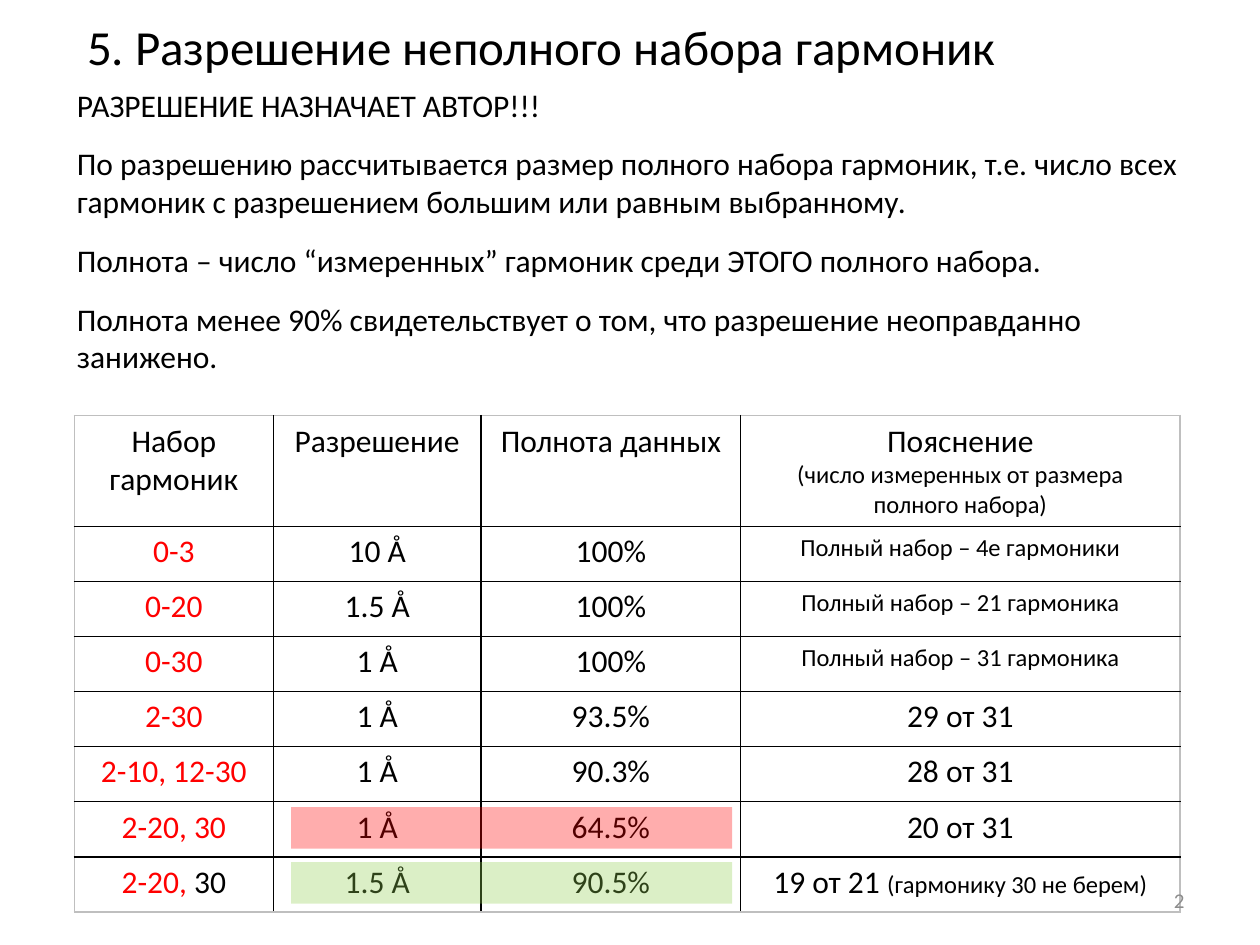
from pptx import Presentation
from pptx import util as u
from pptx.dml.color import RGBColor
from pptx.enum import shapes, text
from pptx.oxml import parse_xml
from pptx.oxml.ns import nsdecls, qn
from lxml import etree

# Content: a cell is a list of paragraphs, a paragraph a list of (text, size, colour)
FONT = "Calibri"
BLACK, RED, GREEN, GREY, EDGE = "000000", "FF0000", "92D050", "8C8C8C", "BFBFBF"
TITLE = "5. Разрешение неполного набора гармоник"
NOTES = [
    "РАЗРЕШЕНИЕ НАЗНАЧАЕТ АВТОР!!!",
    "По разрешению рассчитывается размер полного набора гармоник, т.е. число всех "
    "гармоник с разрешением большим или равным выбранному.",
    "Полнота – число “измеренных” гармоник среди ЭТОГО полного набора.",
    "Полнота менее 90% свидетельствует о том, что разрешение неоправданно занижено.",
]


def cell(words, size=18, color=BLACK):
    return [[(words, size, color)]]


HEAD = [
    cell("Набор гармоник"), cell("Разрешение"), cell("Полнота данных"),
    cell("Пояснение") + cell("(число измеренных от размера полного набора)", 14),
]
DATA = [
    ("0-3", "10 Å", "100%", cell("Полный набор – 4е гармоники", 14)),
    ("0-20", "1.5 Å", "100%", cell("Полный набор – 21 гармоника", 14)),
    ("0-30", "1 Å", "100%", cell("Полный набор – 31 гармоника", 14)),
    ("2-30", "1 Å", "93.5%", cell("29 от 31")),
    ("2-10, 12-30", "1 Å", "90.3%", cell("28 от 31")),
    ("2-20, 30", "1 Å", "64.5%", cell("20 от 31")),
    ([[("2-20, ", 18, RED), ("30", 18, BLACK)]], "1.5 Å", "90.5%",
     [[("19 от 21 ", 18, BLACK), ("(гармонику 30 не берем)", 14, BLACK)]]),
]
MARKS = {6: RED, 7: GREEN}  # table row: band colour

# Grid, in cm
LEFT, TOP = 1.5, 8.38
COLS = [4.01, 4.19, 5.23, 8.86]
HEAD_H, ROW_H = 2.23, 1.11


def rgb(code):
    return RGBColor.from_string(code)


def write(frame, paras, align, after=0):
    frame.word_wrap = True
    for i, runs in enumerate(paras):
        para = frame.paragraphs[0] if i == 0 else frame.add_paragraph()
        para.alignment = align
        para.space_after = u.Pt(after)
        for words, size, color in runs:
            run = para.add_run()
            run.text = words
            run.font.name, run.font.size = FONT, u.Pt(size)
            run.font.color.rgb = rgb(color)


def border(box, colors):
    props = box._tc.get_or_add_tcPr()
    for i, (side, color) in enumerate(colors.items()):
        props.insert(i, parse_xml(
            f'<a:{side} {nsdecls("a")} w="12700"><a:solidFill>'
            f'<a:srgbClr val="{color}"/></a:solidFill></a:{side}>'))


def place(cm):
    return [u.Cm(n) for n in cm]


prs = Presentation()
prs.slide_width, prs.slide_height = u.Cm(25.4), u.Cm(19.05)
slide = prs.slides.add_slide(prs.slide_layouts[5])

# Title
title = slide.shapes.title
title.left, title.top, title.width, title.height = place((1.5, 0.3, 18.87, 1.27))
title.text_frame.auto_size = text.MSO_AUTO_SIZE.NONE
title.text_frame.vertical_anchor = text.MSO_ANCHOR.MIDDLE
write(title.text_frame, cell(TITLE, 28), text.PP_ALIGN.LEFT)

# Table
rows = [HEAD] + [
    [cell(name, color=RED) if isinstance(name, str) else name, cell(res), cell(full), note]
    for name, res, full, note in DATA]
heights = [HEAD_H] + [ROW_H] * len(DATA)
table = slide.shapes.add_table(
    len(rows), len(COLS), *place((LEFT, TOP, sum(COLS), sum(heights)))).table
table.first_row = table.horz_banding = False
for col, width in zip(table.columns, COLS):
    col.width = u.Cm(width)
for r, row in enumerate(rows):
    table.rows[r].height = u.Cm(heights[r])
    for c, paras in enumerate(row):
        box = table.cell(r, c)
        box.fill.background()
        write(box.text_frame, paras, text.PP_ALIGN.CENTER)
        outer = {"lnL": c == 0, "lnR": c == len(COLS) - 1,
                 "lnT": r == 0, "lnB": r == len(rows) - 1}
        border(box, {side: EDGE if out else BLACK for side, out in outer.items()})

# Explanation above the table
notes = slide.shapes.add_textbox(*place((1.3, 1.6, 23.39, 6.15)))
write(notes.text_frame, [[(line, 18, BLACK)] for line in NOTES], text.PP_ALIGN.LEFT, 12)

# See-through bands over the last two rows
for r, color in MARKS.items():
    y = TOP + sum(heights[:r]) + 0.11
    band = slide.shapes.add_shape(
        shapes.MSO_SHAPE.RECTANGLE, *place((5.87, y, 8.89, 0.84)))
    band.shadow.inherit = False
    band.line.fill.background()
    band.fill.solid()
    band.fill.fore_color.rgb = rgb(color)
    tint = band.fill._xPr.find(qn("a:solidFill"))[0]
    etree.SubElement(tint, qn("a:alpha"), val="32000")

# Page number
page = slide.shapes.add_textbox(*place((18.2, 17.65, 5.93, 1.01)))
page.text_frame.vertical_anchor = text.MSO_ANCHOR.MIDDLE
write(page.text_frame, cell("2", 12, GREY), text.PP_ALIGN.RIGHT)

prs.save("out.pptx")
